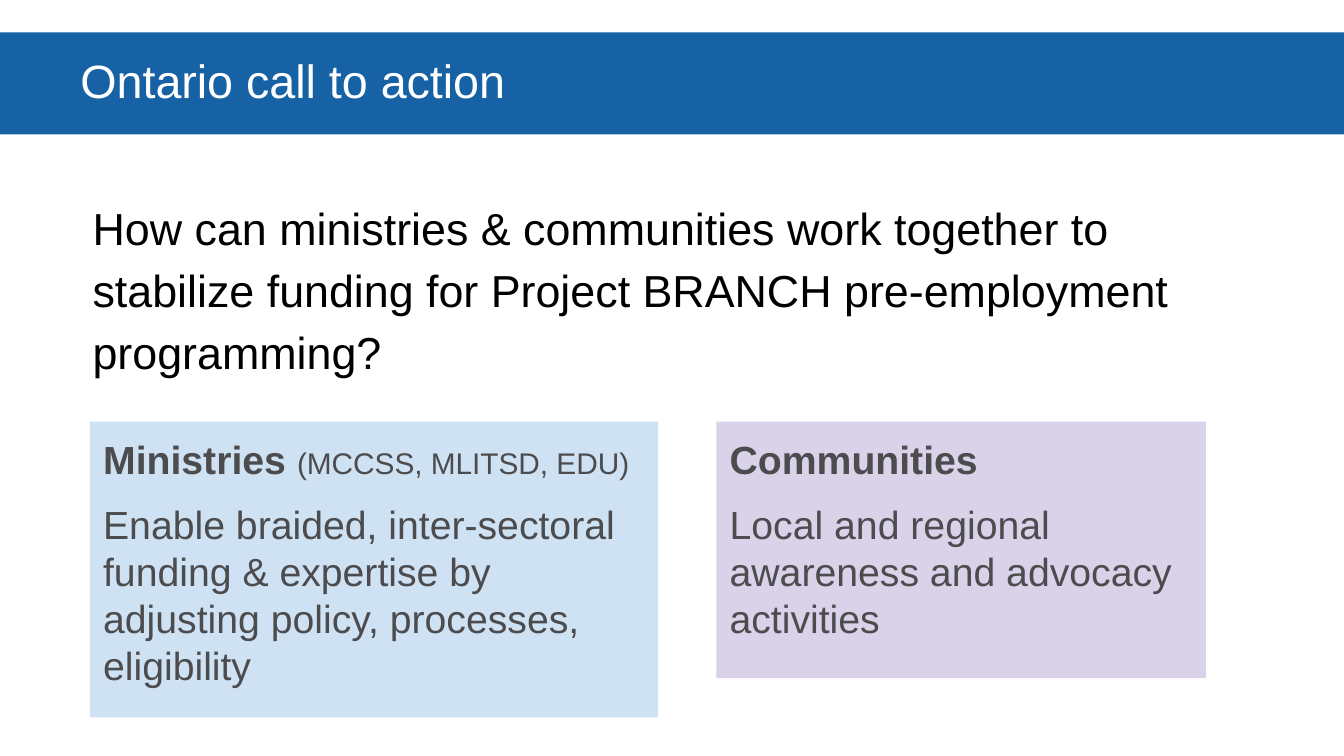
from pptx import Presentation
from pptx.util import Cm, Pt
from pptx.dml.color import RGBColor
from pptx.enum import shapes, text

GREY = "4C4C4E"


def paint(fill, color):
    fill.solid()
    fill.fore_color.rgb = RGBColor.from_string(color)


def write(para, words, size, color, bold=False):
    """Add one run to a paragraph."""
    run = para.add_run()
    run.text = words
    font = run.font
    font.name, font.size, font.bold = "Arial", Pt(size), bold
    paint(font.fill, color)


deck = Presentation()
deck.slide_width, deck.slide_height = Cm(25.4), Cm(14.29)
slide = deck.slides.add_slide(deck.slide_layouts[5])

# Title band
title = slide.shapes.title
title.left, title.top = Cm(0), Cm(0.61)
title.width, title.height = Cm(25.4), Cm(1.93)
paint(title.fill, "1662A5")
frame = title.text_frame
frame.auto_size = text.MSO_AUTO_SIZE.NONE
frame.vertical_anchor = text.MSO_ANCHOR.MIDDLE
frame.margin_left = Cm(1.52)
para = frame.paragraphs[0]
para.alignment = text.PP_ALIGN.LEFT
para.line_spacing = 0.9
write(para, "Ontario call to action", 25, "FFFFFF")

# Question
box = slide.shapes.add_textbox(Cm(1.5), Cm(3.4), Cm(22.07), Cm(4.55))
frame = box.text_frame
frame.word_wrap = True
frame.margin_top = frame.margin_bottom = Cm(0.25)
para = frame.paragraphs[0]
para.line_spacing = 1.15
para.space_before = Pt(11)
write(para, "How can ministries & communities work together to stabilize funding "
      "for Project BRANCH pre-employment programming?", 24, "000000")

# Cards: left, width, height, fill, heading, note, body
cards = [
    (1.7, 10.74, 5.59, "CFE2F3", "Ministries ", "(MCCSS, MLITSD, EDU)",
     "Enable braided, inter-sectoral funding & expertise by adjusting "
     "policy, processes, eligibility"),
    (13.54, 9.25, 4.85, "D9D2E9", "Communities", "",
     "Local and regional awareness and advocacy activities"),
]
for left, width, height, color, head, note, body in cards:
    card = slide.shapes.add_shape(shapes.MSO_SHAPE.RECTANGLE, Cm(left), Cm(7.97),
                                  Cm(width), Cm(height))
    card.shadow.inherit = False
    card.line.fill.background()
    paint(card.fill, color)
    frame = card.text_frame
    frame.word_wrap = True
    frame.vertical_anchor = text.MSO_ANCHOR.TOP
    frame.margin_top = frame.margin_bottom = Cm(0.25)
    para = frame.paragraphs[0]
    para.alignment = text.PP_ALIGN.LEFT
    write(para, head, 21, GREY, True)
    if note:
        write(para, note, 16, GREY)
    para = frame.add_paragraph()
    para.alignment = text.PP_ALIGN.LEFT
    para.space_before = Pt(10)
    write(para, body, 21, GREY)

deck.save("out.pptx")
